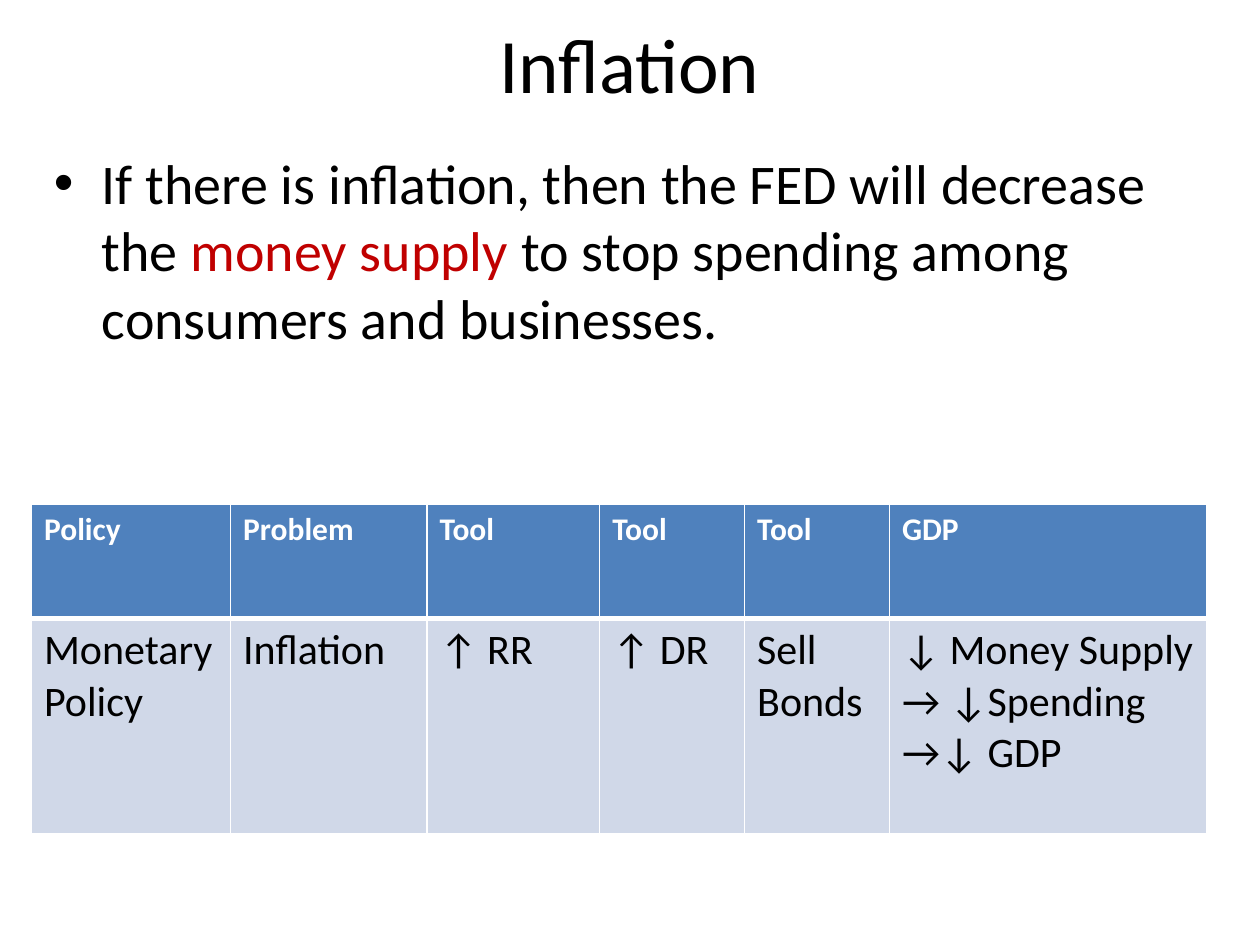
from lxml.etree import SubElement
from pptx import Presentation
from pptx.dml.color import RGBColor
from pptx.enum.text import MSO_ANCHOR, PP_ALIGN
from pptx.oxml.ns import qn
from pptx.util import Inches, Pt

FONT = "Calibri"
COLORS = {
    "text": "000000",
    "accent": "C00000",
    "header": "4F81BD",
    "body": "D0D8E8",
    "white": "FFFFFF",
}
TITLE = "Inflation"
STATEMENT = [
    ("If there is inflation, then the FED will decrease the ", "text"),
    ("money supply", "accent"),
    (" to stop spending among consumers and businesses.", "text"),
]
ROWS = [
    ["Policy", "Problem", "Tool", "Tool", "Tool", "GDP"],
    ["Monetary Policy", "Inflation", "↑ RR", "↑ DR", "Sell Bonds",
     "↓ Money Supply → ↓Spending →↓ GDP"],
]
COLUMN_WIDTHS = [1.58, 1.56, 1.37, 1.15, 1.15, 2.52]
# height, fill, text colour, size, bold, top border, bottom border
ROW_STYLES = [
    (0.91, "header", "white", 18, True, 1, 3),
    (1.71, "body", "text", 24, False, 3, 1),
]


def set_font(font, size, color, bold=False):
    font.name = FONT
    font.size = Pt(size)
    font.bold = bold
    font.color.rgb = RGBColor.from_string(COLORS[color])


def add_text_box(slide, left, top, width, height, anchor):
    box = slide.shapes.add_textbox(*map(Inches, (left, top, width, height)))
    box.text_frame.word_wrap = True
    box.text_frame.vertical_anchor = anchor
    return box.text_frame.paragraphs[0]


def add_bullet(paragraph, indent):
    properties = paragraph._p.get_or_add_pPr()
    properties.set("marL", str(Inches(indent)))
    properties.set("indent", str(-Inches(indent)))
    SubElement(properties, qn("a:buFont"), typeface="Arial")
    SubElement(properties, qn("a:buChar"), char="•")


def set_borders(cell, top, bottom):
    """Draw white cell borders; they must come before the fill in the XML."""
    properties = cell._tc.get_or_add_tcPr()
    for side, width in (("L", 1), ("R", 1), ("T", top), ("B", bottom)):
        line = SubElement(properties, qn(f"a:ln{side}"), w=str(Pt(width)))
        fill = SubElement(line, qn("a:solidFill"))
        SubElement(fill, qn("a:srgbClr"), val=COLORS["white"])


def add_policy_table(slide):
    heights = [style[0] for style in ROW_STYLES]
    table = slide.shapes.add_table(
        len(ROWS), len(COLUMN_WIDTHS), Inches(0.25), Inches(4),
        Inches(sum(COLUMN_WIDTHS)), Inches(sum(heights))).table
    for column, width in zip(table.columns, COLUMN_WIDTHS):
        column.width = Inches(width)
    for row, texts, style in zip(table.rows, ROWS, ROW_STYLES):
        height, fill, color, size, bold, top, bottom = style
        row.height = Inches(height)
        for cell, text in zip(row.cells, texts):
            cell.text = text
            set_font(cell.text_frame.paragraphs[0].font, size, color, bold)
            set_borders(cell, top, bottom)
            cell.fill.solid()
            cell.fill.fore_color.rgb = RGBColor.from_string(COLORS[fill])


def main():
    presentation = Presentation()
    presentation.slide_width = Inches(10)
    presentation.slide_height = Inches(7.5)
    slide = presentation.slides.add_slide(presentation.slide_layouts[6])

    title = add_text_box(slide, 0.08, 0, 9.83, 1, MSO_ANCHOR.MIDDLE)
    title.text = TITLE
    title.alignment = PP_ALIGN.CENTER
    set_font(title.font, 44, "text")

    add_policy_table(slide)

    statement = add_text_box(slide, 0.33, 1.13, 9.17, 2.62, MSO_ANCHOR.TOP)
    statement.space_before = Pt(6.4)
    add_bullet(statement, 0.38)
    for text, color in STATEMENT:
        run = statement.add_run()
        run.text = text
        set_font(run.font, 32, color)

    presentation.save("out.pptx")


if __name__ == "__main__":
    main()
